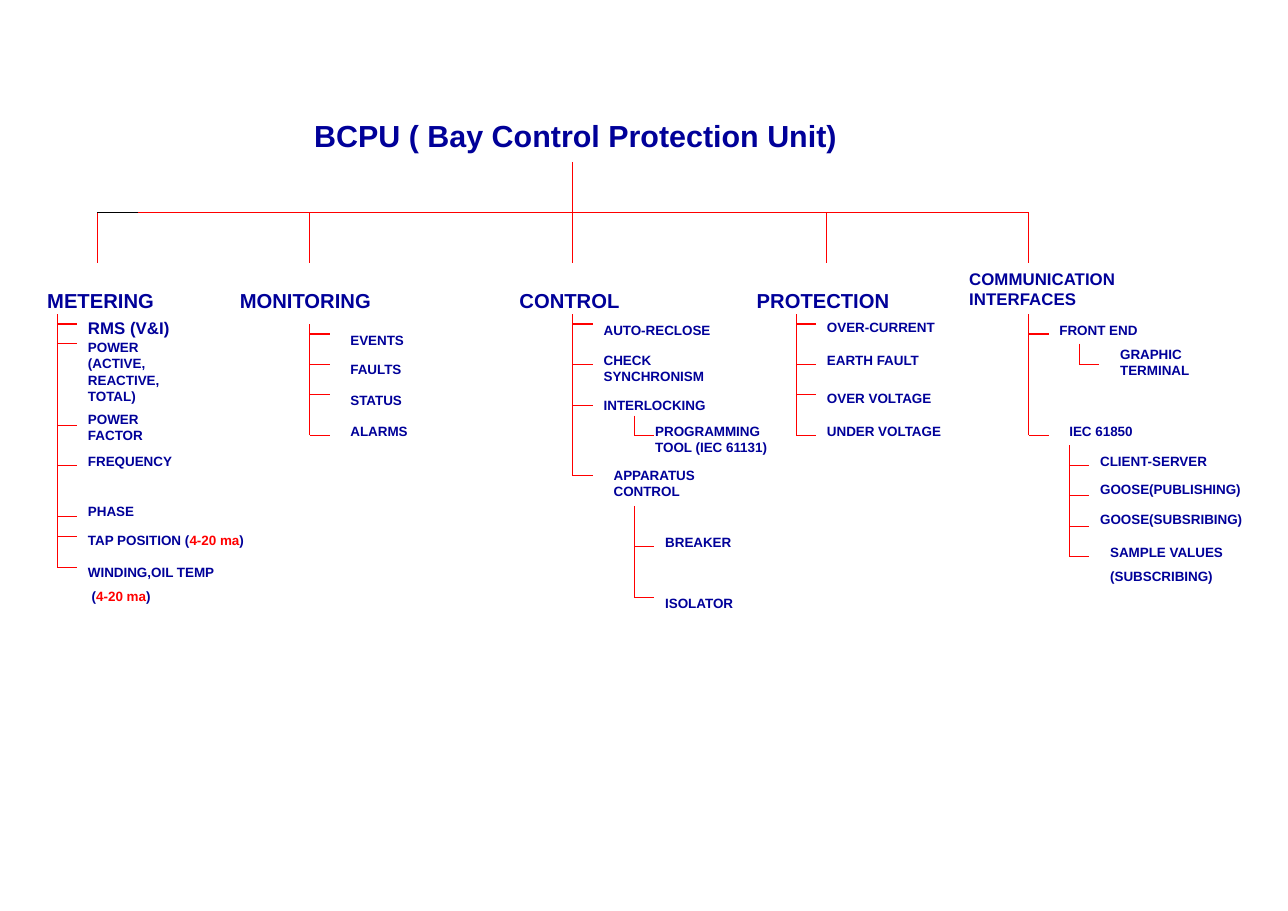
import dataclasses

import lxml.etree
import pptx
import pptx.dml.color
import pptx.enum.shapes
import pptx.enum.text
import pptx.oxml.ns
import pptx.util

Cm = pptx.util.Cm
Pt = pptx.util.Pt


@dataclasses.dataclass
class Theme:
    font: str = "Arial"
    text: str = "000099"
    accent: str = "FF0000"
    black: str = "000000"
    title_size: float = 19.9
    heading_size: float = 13.2
    medium_size: float = 11
    item_size: float = 8.8
    line_width: float = 0.75


THEME = Theme()


@dataclasses.dataclass
class Item:
    """A label beside a tick; text between bars takes the accent colour."""
    tick: float
    top: float
    text: str
    width: float = 3.5
    indent: float = 0
    size: float = THEME.item_size


TITLE = "BCPU ( Bay Control Protection Unit)"

# text, left, top, width, height, size
HEADINGS = [
    ("METERING", 0.84, 6.53, 3.73, 0.8, THEME.heading_size),
    ("MONITORING", 5.28, 6.53, 3.73, 0.8, THEME.heading_size),
    ("CONTROL", 11.73, 6.53, 3.73, 0.8, THEME.heading_size),
    ("PROTECTION", 17.2, 6.53, 3.73, 0.8, THEME.heading_size),
    ("COMMUNICATION INTERFACES", 22.1, 6.07, 4.19, 1.19, THEME.medium_size),
]

# trunk x, trunk top, items
BRANCHES = [
    (1.32, 7.24, [
        Item(7.47, 7.19, "RMS (V&I)", size=THEME.medium_size),
        Item(7.92, 7.7, "POWER (ACTIVE, REACTIVE, TOTAL)", 2.79),
        Item(9.8, 9.35, "POWER FACTOR", 2.79),
        Item(10.74, 10.31, "FREQUENCY", 2.79),
        Item(11.91, 11.48, "PHASE", 2.79),
        Item(12.37, 12.14, "TAP POSITION (|4-20 ma|)", 4.45),
        Item(13.08, 12.88, "WINDING,OIL TEMP\n (|4-20 ma|)", 3.73),
    ]),
    (7.14, 7.47, [
        Item(7.7, 7.52, "EVENTS", 2.11, 0.23),
        Item(8.41, 8.2, "FAULTS", 2.11, 0.23),
        Item(9.09, 8.92, "STATUS", 2.11, 0.23),
        Item(10.03, 9.63, "ALARMS", 2.11, 0.23),
    ]),
    (13.21, 7.24, [
        Item(7.47, 7.29, "AUTO-RECLOSE"),
        Item(8.41, 7.98, "CHECK SYNCHRONISM"),
        Item(9.35, 9.02, "INTERLOCKING"),
        Item(10.97, 10.64, "APPARATUS CONTROL", indent=0.23),
    ]),
    (14.63, 9.58, [
        Item(10.03, 9.63, "PROGRAMMING TOOL (IEC 61131)", indent=-0.23),
    ]),
    (14.63, 11.66, [
        Item(12.6, 12.19, "BREAKER"),
        Item(13.77, 13.59, "ISOLATOR"),
    ]),
    (18.36, 7.24, [
        Item(7.47, 7.24, "OVER-CURRENT"),
        Item(8.41, 7.98, "EARTH FAULT"),
        Item(9.09, 8.86, "OVER VOLTAGE"),
        Item(10.03, 9.63, "UNDER VOLTAGE"),
    ]),
    (23.72, 7.24, [
        Item(7.7, 7.29, "FRONT END"),
        Item(10.03, 9.63, "IEC 61850", indent=0.23),
    ]),
    (24.89, 7.92, [
        Item(8.41, 7.85, "GRAPHIC TERMINAL", indent=0.23),
    ]),
    (24.66, 10.26, [
        Item(10.74, 10.31, "CLIENT-SERVER", 3.96),
        Item(11.43, 10.97, "GOOSE(PUBLISHING)", 3.96),
        Item(12.14, 11.66, "GOOSE(SUBSRIBING)", 3.96),
        Item(12.83, 12.42, "SAMPLE VALUES\n(SUBSCRIBING)", 4.19, 0.23),
    ]),
]

STEM_X, STEM_TOP, BUS_Y, DROP_END = 13.21, 3.73, 4.9, 6.07
DROPS = [2.24, 7.14, STEM_X, 19.05, 23.72]
BLACK_END = 3.18
TICK = 0.46


def write(frame, text, size, align=pptx.enum.text.PP_ALIGN.LEFT):
    frame.word_wrap = True
    frame.auto_size = pptx.enum.text.MSO_AUTO_SIZE.NONE
    frame.vertical_anchor = pptx.enum.text.MSO_ANCHOR.TOP
    for index, line in enumerate(text.split("\n")):
        para = frame.add_paragraph() if index else frame.paragraphs[0]
        para.alignment = align
        para.space_before = Pt(5 if index else 0)
        for part, words in enumerate(line.split("|")):
            span = para.add_run()
            span.text = words
            span.font.name = THEME.font
            span.font.size = Pt(size)
            span.font.bold = True
            color = THEME.accent if part % 2 else THEME.text
            span.font.color.rgb = pptx.dml.color.RGBColor.from_string(color)


def add_label(page, text, left, top, width, height, size):
    box = page.shapes.add_textbox(Cm(left), Cm(top), Cm(width), Cm(height))
    write(box.text_frame, text, size)


def add_line(page, x1, y1, x2, y2, color=THEME.accent):
    line = page.shapes.add_connector(
        pptx.enum.shapes.MSO_CONNECTOR.STRAIGHT, Cm(x1), Cm(y1), Cm(x2), Cm(y2))
    line.line.color.rgb = pptx.dml.color.RGBColor.from_string(color)
    line.line.width = Pt(THEME.line_width)
    properties = line._element.spPr
    lxml.etree.SubElement(properties, pptx.oxml.ns.qn("a:effectLst"))


def add_branch(page, x, top, items):
    add_line(page, x, top, x, items[-1].tick)
    for item in items:
        add_line(page, x, item.tick, x + TICK, item.tick)
        lines = item.text.count("\n") + 1
        add_label(page, item.text, x + TICK + item.indent, item.top,
                  item.width, 0.1 + 0.54 * lines, item.size)


def main():
    deck = pptx.Presentation()
    deck.slide_width, deck.slide_height = Cm(29.7), Cm(21)
    page = deck.slides.add_slide(deck.slide_layouts[5])

    title = page.shapes.title
    title.left, title.top = Cm(5.92), Cm(2.57)
    title.width, title.height = Cm(14.71), Cm(1.12)
    write(title.text_frame, TITLE, THEME.title_size,
          align=pptx.enum.text.PP_ALIGN.CENTER)

    add_line(page, STEM_X, STEM_TOP, STEM_X, BUS_Y)
    add_line(page, BLACK_END, BUS_Y, DROPS[-1], BUS_Y)
    add_line(page, DROPS[0], BUS_Y, BLACK_END, BUS_Y, color=THEME.black)
    for x in DROPS:
        add_line(page, x, BUS_Y, x, DROP_END)

    for heading in HEADINGS:
        add_label(page, *heading)
    for branch in BRANCHES:
        add_branch(page, *branch)

    deck.save("out.pptx")


if __name__ == "__main__":
    main()
